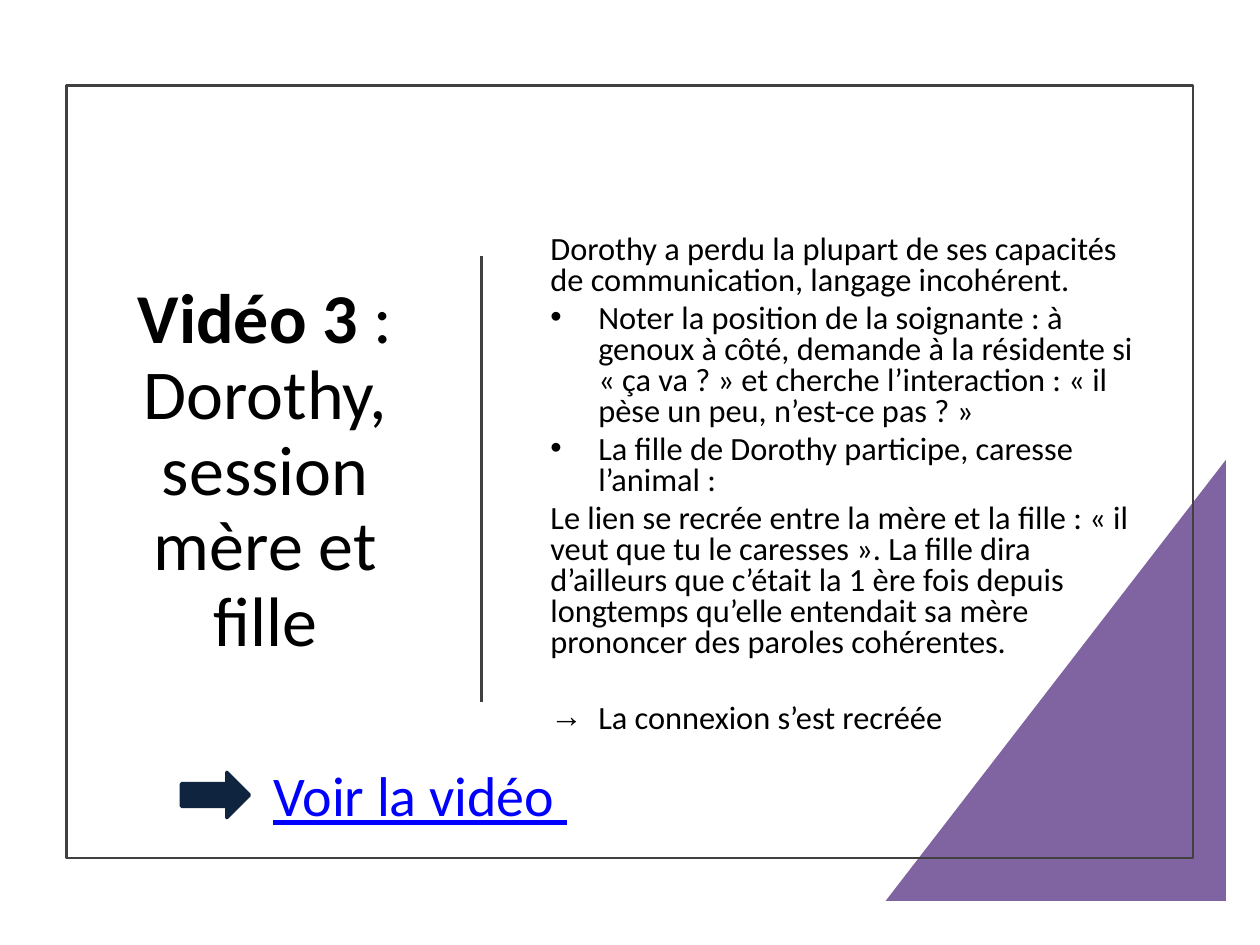
import pptx
import pptx.util
import pptx.dml.color
import pptx.enum.shapes
import pptx.enum.text
import pptx.oxml.ns
import lxml.etree

Inches, Pt = pptx.util.Inches, pptx.util.Pt
MSO_SHAPE = pptx.enum.shapes.MSO_SHAPE
ALIGN = pptx.enum.text.PP_ALIGN
ANCHOR = pptx.enum.text.MSO_ANCHOR
qn = pptx.oxml.ns.qn

COLORS = {
    name: pptx.dml.color.RGBColor.from_string(value)
    for name, value in {
        "purple": "8064A2", "frame": "404040", "navy": "0F243E",
        "text": "000000", "link": "0000FF",
    }.items()
}

deck = pptx.Presentation()
deck.slide_width, deck.slide_height = Inches(10), Inches(7.5)
slide = deck.slides.add_slide(deck.slide_layouts[6])


def add_box(left, top, width, height, anchor):
    frame = slide.shapes.add_textbox(
        Inches(left), Inches(top), Inches(width), Inches(height)).text_frame
    frame.word_wrap = True
    frame.vertical_anchor = anchor
    return frame


def add_run(paragraph, text, size, color="text", **style):
    run = paragraph.add_run()
    run.text = text
    for key, value in {"name": "Calibri", "size": Pt(size), **style}.items():
        setattr(run.font, key, value)
    run.font.color.rgb = COLORS[color]


# Corner triangle, frame and arrow: preset, place, fill, line, line width
shapes = [
    (MSO_SHAPE.RIGHT_TRIANGLE, (7.03, 3.65, 2.7, 3.5), "purple", None, 0),
    (MSO_SHAPE.RECTANGLE, (0.53, 0.68, 8.94, 6.13), None, "frame", 1.5),
    (MSO_SHAPE.RIGHT_ARROW, (1.44, 6.13, 0.54, 0.36), "navy", "navy", 2),
]
for preset, place, fill, line, line_width in shapes:
    shape = slide.shapes.add_shape(preset, *map(Inches, place))
    shape.shadow.inherit = False
    if fill:
        shape.fill.solid()
        shape.fill.fore_color.rgb = COLORS[fill]
    else:
        shape.fill.background()
    if line:
        shape.line.color.rgb = COLORS[line]
        shape.line.width = Pt(line_width)
    else:
        shape.line.fill.background()
    if preset == MSO_SHAPE.RIGHT_TRIANGLE:
        shape.element.spPr.xfrm.set("flipH", "1")

# Title
title = add_box(0.88, 1.3, 2.45, 4.9, ANCHOR.MIDDLE).paragraphs[0]
title.alignment = ALIGN.CENTER
title.line_spacing = 0.9
add_run(title, "Vidéo 3 ", 40, bold=True)
add_run(title, ": Dorothy, session mère et fille", 40, bold=False)

# Divider
divider = slide.shapes.add_connector(
    pptx.enum.shapes.MSO_CONNECTOR.STRAIGHT,
    Inches(3.82), Inches(2.03), Inches(3.82), Inches(5.57))
divider.line.color.rgb = COLORS["frame"]
divider.line.width = Pt(1.5)
lxml.etree.SubElement(divider.element.spPr, qn("a:effectLst"))

# Observations: bullet, space before, text
observations = [
    (None, 3.7, "Dorothy a perdu la plupart de ses capacités de communication, "
     "langage incohérent."),
    ("•", 3.7, "Noter la position de la soignante : à genoux à côté, demande à "
     "la résidente si « ça va ? » et cherche l’interaction : « il pèse un peu, "
     "n’est-ce pas ? »"),
    ("•", 3.7, "La fille de Dorothy participe, caresse l’animal :"),
    (None, 3.7, "Le lien se recrée entre la mère et la fille : « il veut que tu "
     "le caresses ». La fille dira d’ailleurs que c’était la 1 ère fois depuis "
     "longtemps qu’elle entendait sa mère prononcer des paroles cohérentes."),
    ("→", 25.5, "La connexion s’est recréée"),
]
body = add_box(4.27, 1.51, 4.85, 4.69, ANCHOR.MIDDLE)
for index, (bullet, space, text) in enumerate(observations):
    paragraph = body.add_paragraph() if index else body.paragraphs[0]
    paragraph.line_spacing = 0.8
    paragraph.space_before = Pt(space)
    add_run(paragraph, text, 18.5)
    if bullet:
        properties = paragraph._p.get_or_add_pPr()
        properties.set("marL", str(Inches(0.38)))
        properties.set("indent", str(-Inches(0.38)))
        lxml.etree.SubElement(properties, qn("a:buFont"), typeface="Arial")
        lxml.etree.SubElement(properties, qn("a:buChar"), char=bullet)

# Video prompt
prompt = add_box(2.07, 5.99, 3.25, 0.64, ANCHOR.TOP).paragraphs[0]
add_run(prompt, "Voir la vidéo ", 32, "link", underline=True)

deck.save("out.pptx")
